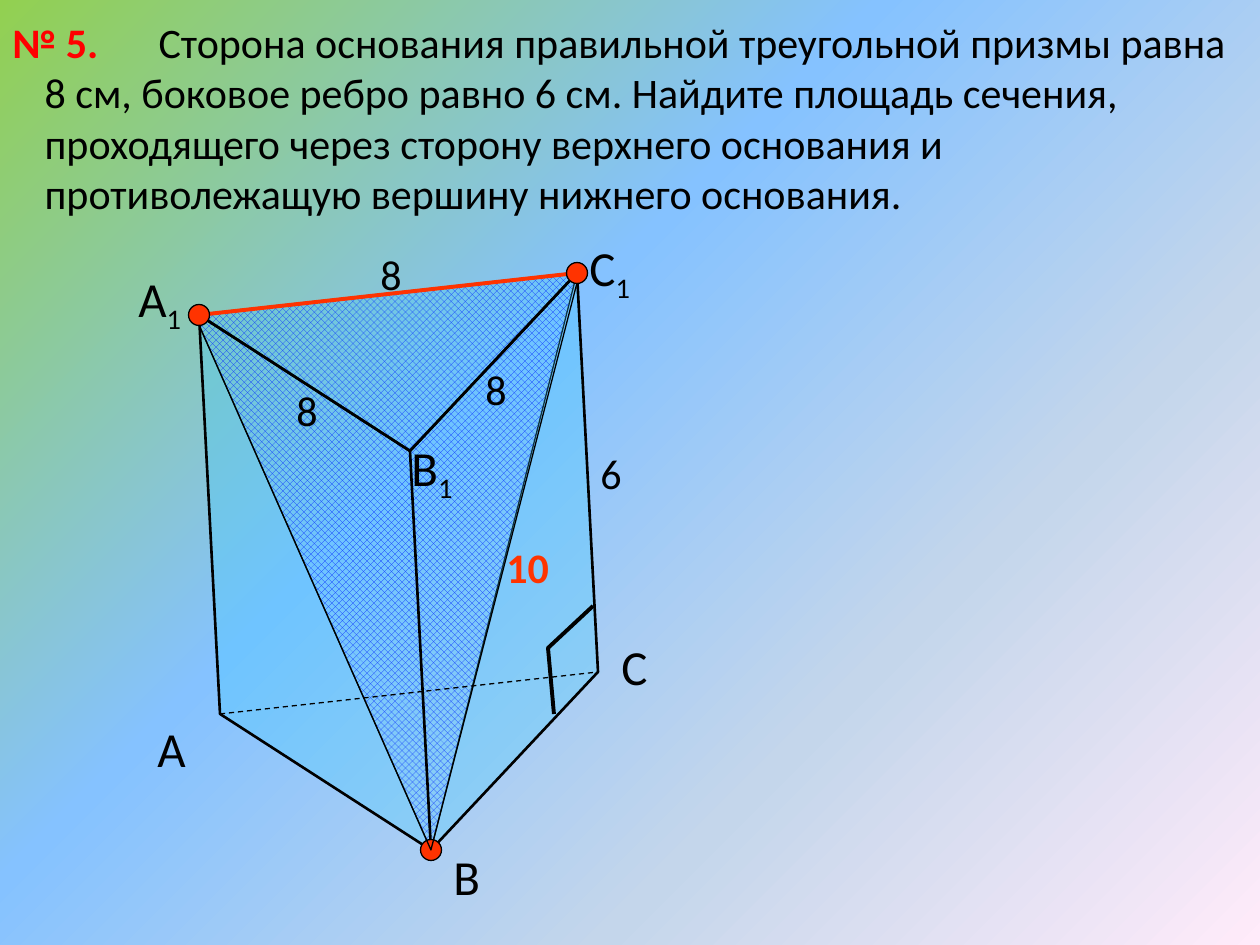
from lxml import etree
from pptx import Presentation
from pptx import util as u
from pptx.dml.color import RGBColor
from pptx.enum import dml, shapes, text
from pptx.oxml.ns import qn

SCALE = 914400 / 126  # EMU in one px

BLACK = RGBColor(0x00, 0x00, 0x00)
WHITE = RGBColor(0xFF, 0xFF, 0xFF)
RED = RGBColor(0xFF, 0x00, 0x00)
ORANGE = RGBColor(0xFF, 0x33, 0x00)
CYAN = RGBColor(0x33, 0xCC, 0xFF)
BLUE = RGBColor(0x00, 0x00, 0xFF)
BACKDROP = [(0, RGBColor(0x92, 0xD0, 0x50)), (40, RGBColor(0x85, 0xC2, 0xFF)),
            (70, RGBColor(0xC4, 0xD6, 0xEB)), (100, RGBColor(0xFF, 0xEB, 0xFA))]

PROBLEM = ("Сторона основания правильной треугольной призмы равна 8 см, "
           "боковое ребро равно 6 см. Найдите площадь сечения, проходящего "
           "через сторону верхнего основания и противолежащую вершину "
           "нижнего основания.")


def px(length):
    return u.Emu(round(length * SCALE))


def shift(point, offset):
    return point[0] + offset[0], point[1] + offset[1]


def write(frame, words, size=24, color=BLACK, bold=False, subscript=""):
    frame.word_wrap = True
    frame.auto_size = text.MSO_AUTO_SIZE.NONE
    frame.vertical_anchor = text.MSO_ANCHOR.TOP
    paragraph = frame.paragraphs[0]
    paragraph.alignment = text.PP_ALIGN.LEFT
    for part in filter(None, (words, subscript)):
        run = paragraph.add_run()
        run.text = part
        run.font.name = "Calibri"
        run.font.size = u.Pt(size)
        run.font.bold = bold
        run.font.color.rgb = color
    if subscript:
        run.font._element.set("baseline", "-25000")
    return paragraph


def add_label(slide, corner, width, height, words, **style):
    label = slide.shapes.add_textbox(*map(px, (*corner, width, height)))
    write(label.text_frame, words, **style)


def set_alpha(color_element, percent):
    etree.SubElement(color_element, qn("a:alpha")).set("val", str(percent * 1000))


def draw_outline(slide, points, origin, weight, close=False, tint=None):
    start, *rest = [shift(point, origin) for point in points]
    builder = slide.shapes.build_freeform(*start, scale=SCALE)
    builder.add_line_segments(rest, close=close)
    outline = builder.convert_to_shape()
    outline.shadow.inherit = False
    outline.line.color.rgb = BLACK
    outline.line.width = u.Pt(weight)
    if tint is None:
        outline.fill.background()
    else:
        outline.fill.solid()
        outline.fill.fore_color.rgb = tint
        set_alpha(outline._element.spPr.find(f"{qn('a:solidFill')}/{qn('a:srgbClr')}"), 26)
    return outline


def paint_background(slide):
    fill = slide.background.fill
    fill.gradient()
    fill.gradient_angle = 315
    stops = slide._element.find(f".//{qn('a:gsLst')}")
    for stop in list(stops):
        stops.remove(stop)
    for position, color in BACKDROP:
        stop = etree.SubElement(stops, qn("a:gs"))
        stop.set("pos", str(position * 1000))
        etree.SubElement(stop, qn("a:srgbClr")).set("val", str(color))


def place_problem(slide, left, top, width, height):
    statement = slide.shapes.title
    statement.left, statement.top = px(left + 32), px(top)
    statement.width, statement.height = px(width - 32), px(height)
    paragraph = write(statement.text_frame, PROBLEM)
    # The first line leaves room for the problem number
    paragraph._p.get_or_add_pPr().set("indent", str(px(114)))
    add_label(slide, (left, top), 120, 63, "№ 5.", color=RED, bold=True)


def place_prism(slide, left, top):
    origin = left, top
    a1, b1, c1 = (0, 42), (211, 178), (378, 0)
    a, b, c = (shift(vertex, (21, 399)) for vertex in (a1, b1, c1))
    below_a1, below_c1 = shift(a1, (0, 10)), shift(c1, (0, 10))

    # Section through the upper side and the opposite lower vertex
    section = draw_outline(slide, [below_a1, b, c1, a1], origin, 0.75)
    section.fill.patterned()
    section.fill.pattern = dml.MSO_PATTERN.OUTLINED_DIAMOND
    section.fill.fore_color.rgb = BLUE
    section.fill.back_color.rgb = WHITE
    set_alpha(section._element.spPr.find(f".//{qn('a:bgClr')}/{qn('a:srgbClr')}"), 0)

    # Side faces, upper base and lower base
    draw_outline(slide, [a1, a, b, b1, c1, c, b, b1], origin, 1.5, close=True, tint=CYAN)
    draw_outline(slide, [a1, c1, b1], origin, 1.5, close=True, tint=CYAN)
    lower_base = draw_outline(slide, [a, c, b], origin, 0.75, close=True)
    lower_base.line.dash_style = dml.MSO_LINE.DASH

    # Upper side of the section
    ends = [px(n) for vertex in (a1, c1) for n in shift(vertex, origin)]
    side = slide.shapes.add_connector(shapes.MSO_CONNECTOR.STRAIGHT, *ends)
    side.line.color.rgb = ORANGE
    side.line.width = u.Pt(2.25)
    etree.SubElement(side._element.spPr, qn("a:effectLst"))

    # Vertices of the section
    for vertex in (b, a1, c1):
        x, y = shift(vertex, origin)
        dot = slide.shapes.add_shape(shapes.MSO_SHAPE.OVAL, *map(px, (x - 10.5, y - 10.5, 21, 21)))
        dot.shadow.inherit = False
        dot.fill.solid()
        dot.fill.fore_color.rgb = ORANGE
        dot.line.color.rgb = BLACK
        dot.line.width = u.Pt(0.75)

    # Slanted sides of the section and the right angle mark
    draw_outline(slide, [below_a1, b, below_c1], origin, 0.75)
    draw_outline(slide, [(394, 333), (349, 375), (355, 441)], origin, 2.25)

    # Vertex names
    for name, index, corner in [("А", "", (-54, 439)), ("В", "", (242, 567)),
                                ("С", "", (410, 357)), ("С", "1", (378, -42)),
                                ("В", "1", (200, 158)), ("А", "1", (-73, -11))]:
        add_label(slide, shift(corner, origin), 80, 72, name, size=28, subscript=index)

    # Edge lengths
    for length, corner in [("6", (389, 168)), ("8", (85, 105)),
                           ("8", (169, -31)), ("8", (274, 84))]:
        add_label(slide, shift(corner, origin), 49, 63, length)
    add_label(slide, shift((295, 262), origin), 72, 63, "10", color=ORANGE, bold=True)


def main():
    deck = Presentation()
    deck.slide_width, deck.slide_height = px(1260), px(945)
    slide = deck.slides.add_slide(deck.slide_layouts[5])
    paint_background(slide)
    place_problem(slide, 0, 10, 1260, 214)
    place_prism(slide, 199, 273)
    deck.save("out.pptx")


if __name__ == "__main__":
    main()
